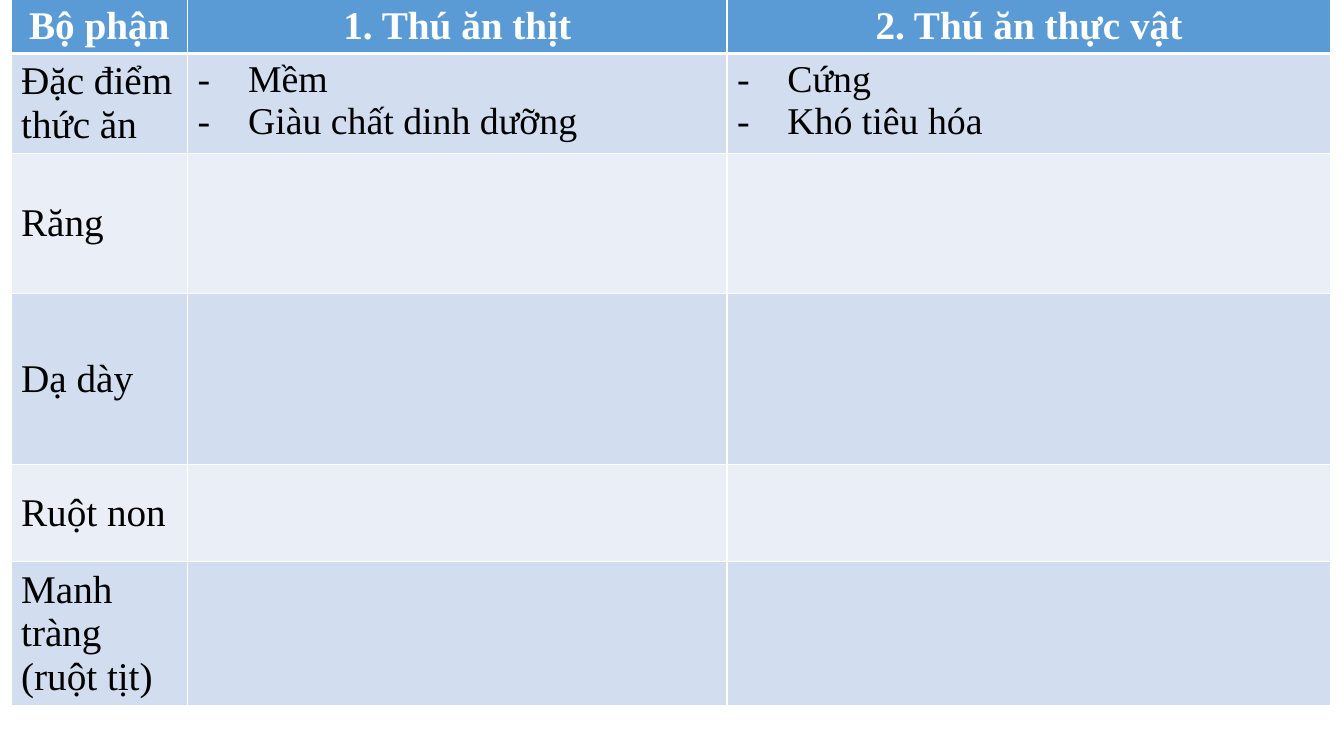
from lxml.etree import SubElement
from pptx import Presentation
from pptx.dml.color import RGBColor
from pptx.enum.text import MSO_ANCHOR, PP_ALIGN
from pptx.oxml.ns import qn
from pptx.util import Inches, Pt

FONT = "Times New Roman"
WHITE = RGBColor(0xFF, 0xFF, 0xFF)
BLACK = RGBColor(0, 0, 0)
HEADER_BLUE = RGBColor(0x5B, 0x9B, 0xD5)
BAND_DARK = RGBColor(0xD2, 0xDE, 0xEF)
BAND_LIGHT = RGBColor(0xEA, 0xEF, 0xF7)

HEADINGS = ["Bộ phận", "1. Thú ăn thịt", "2. Thú ăn thực vật"]
ORGANS = ["Đặc điểm thức ăn", "Răng", "Dạ dày", "Ruột non", "Manh tràng (ruột tịt)"]
FOOD_TRAITS = [["Mềm", "Giàu chất dinh dưỡng"], ["Cứng", "Khó tiêu hóa"]]
COLUMN_WIDTHS = [1.75, 5.35, 5.99]
ROW_HEIGHTS = [0.54, 0.99, 1.39, 1.7, 0.96, 1.43]


def style_cell(cell, fill_color, top_width, bottom_width):
    """Give the cell white borders (widths in points) and a solid fill."""
    properties = cell._tc.get_or_add_tcPr()
    for side, width in zip("LRTB", (1, 1, top_width, bottom_width)):
        line = SubElement(properties, qn(f"a:ln{side}"), w=str(Pt(width)))
        line_fill = SubElement(line, qn("a:solidFill"))
        SubElement(line_fill, qn("a:srgbClr"), val=str(WHITE))
    cell.fill.solid()
    cell.fill.fore_color.rgb = fill_color


def write(paragraph, text, size, color=BLACK, bold=False):
    run = paragraph.add_run()
    run.text = text
    run.font.name = FONT
    run.font.size = Pt(size)
    run.font.bold = bold
    run.font.color.rgb = color


prs = Presentation()
prs.slide_width, prs.slide_height = Inches(13.33), Inches(7.5)
slide = prs.slides.add_slide(prs.slide_layouts[6])

comparison = slide.shapes.add_table(
    len(ROW_HEIGHTS), len(COLUMN_WIDTHS), Inches(0.11), Inches(-0.01),
    Inches(sum(COLUMN_WIDTHS)), Inches(sum(ROW_HEIGHTS))).table
for column, width in zip(comparison.columns, COLUMN_WIDTHS):
    column.width = Inches(width)

for row_index, height in enumerate(ROW_HEIGHTS):
    row = comparison.rows[row_index]
    row.height = Inches(height)
    band = BAND_DARK if row_index % 2 else BAND_LIGHT
    for cell in row.cells:
        style_cell(cell, band if row_index else HEADER_BLUE,
                   3 if row_index == 1 else 1, 1 if row_index else 3)

for column_index, heading in enumerate(HEADINGS):
    cell = comparison.cell(0, column_index)
    cell.vertical_anchor = MSO_ANCHOR.MIDDLE
    paragraph = cell.text_frame.paragraphs[0]
    paragraph.alignment = PP_ALIGN.CENTER
    write(paragraph, heading, 28, WHITE, True)

for row_index, organ in enumerate(ORGANS, start=1):
    cell = comparison.cell(row_index, 0)
    cell.vertical_anchor = MSO_ANCHOR.MIDDLE
    write(cell.text_frame.paragraphs[0], organ, 28)

for column_index, traits in enumerate(FOOD_TRAITS, start=1):
    frame = comparison.cell(1, column_index).text_frame
    for trait_index, trait in enumerate(traits):
        paragraph = frame.add_paragraph() if trait_index else frame.paragraphs[0]
        bullet = paragraph._p.get_or_add_pPr()
        bullet.set("marL", str(Inches(0.5)))
        bullet.set("indent", str(Inches(-0.5)))
        SubElement(bullet, qn("a:buFont"), typeface=FONT)
        SubElement(bullet, qn("a:buChar"), char="-")
        write(paragraph, trait, 27)

prs.save("out.pptx")
